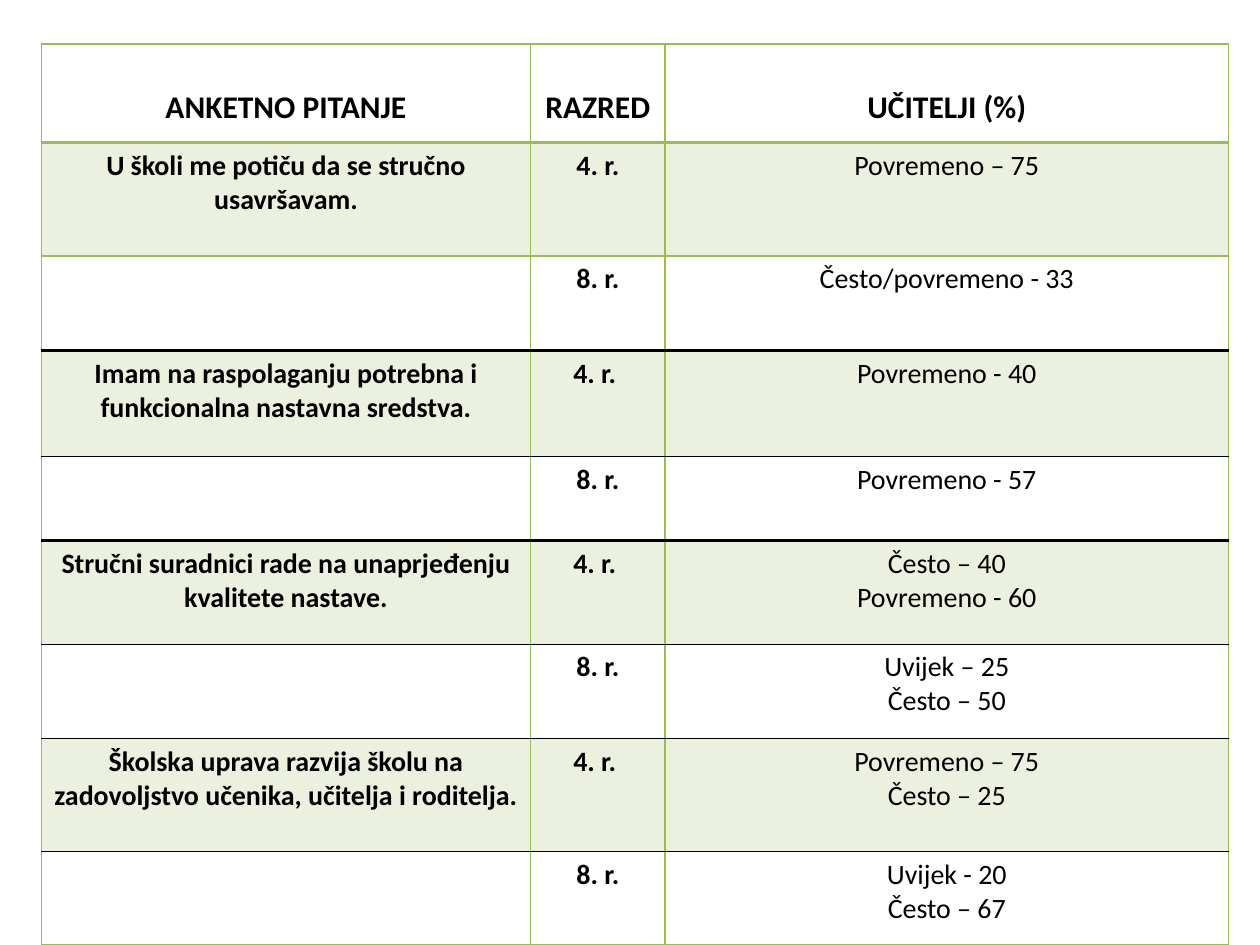
import pptx
import pptx.dml.color
import pptx.enum.text
import pptx.oxml
import pptx.oxml.ns
import pptx.util
from lxml import etree

GREEN = pptx.dml.color.RGBColor(0x9B, 0xBB, 0x59)
PALE_GREEN = pptx.dml.color.RGBColor(0xEB, 0xF1, 0xDE)
BLACK = pptx.dml.color.RGBColor(0, 0, 0)

SLIDE_WIDTH, SLIDE_HEIGHT = 10, 7.5
COLUMN_WIDTHS = [3.88, 1.07, 4.47]
ROW_HEIGHTS = [0.78, 0.9, 0.75, 0.84, 0.67, 0.82, 0.75, 0.9, 0.74]

# Horizontal rules from the top edge of the table to the bottom edge
SIDE_RULE = (GREEN, 1)
THIN_RULE = (BLACK, 0.25)
GROUP_RULE = (BLACK, 2.25)
ROW_RULES = [SIDE_RULE, (GREEN, 2), SIDE_RULE, GROUP_RULE, THIN_RULE,
             GROUP_RULE, THIN_RULE, THIN_RULE, THIN_RULE, SIDE_RULE]

SURVEY = [
    ("ANKETNO PITANJE", "RAZRED", "UČITELJI (%)"),
    ("U školi me potiču da se stručno usavršavam.", "4. r.", "Povremeno – 75"),
    ("", "8. r.", "Često/povremeno - 33"),
    ("Imam na raspolaganju potrebna i funkcionalna nastavna sredstva.",
     "4. r. ", "Povremeno - 40"),
    ("", "8. r.", "Povremeno - 57"),
    ("Stručni suradnici rade na unaprjeđenju kvalitete nastave.",
     "4. r. ", "Često – 40\nPovremeno - 60"),
    ("", "8. r.", "Uvijek – 25\nČesto – 50"),
    ("Školska uprava razvija školu na zadovoljstvo učenika, učitelja i roditelja.",
     "4. r. ", "Povremeno – 75\nČesto – 25"),
    ("", "8. r.", "Uvijek - 20\nČesto – 67"),
]


def set_borders(cell, top, bottom):
    """Draw the green sides and the given (colour, points) rules of a cell."""
    properties = cell._tc.get_or_add_tcPr()
    rules = {"lnL": SIDE_RULE, "lnR": SIDE_RULE, "lnT": top, "lnB": bottom}
    for tag, (colour, points) in rules.items():
        line = etree.SubElement(properties, pptx.oxml.ns.qn("a:" + tag),
                                w=str(pptx.util.Pt(points)))
        fill = etree.SubElement(line, pptx.oxml.ns.qn("a:solidFill"))
        etree.SubElement(fill, pptx.oxml.ns.qn("a:srgbClr"), val=str(colour))


def write_cell(cell, wording, size, bold):
    cell.text_frame.text = wording
    for paragraph in cell.text_frame.paragraphs:
        paragraph.alignment = pptx.enum.text.PP_ALIGN.CENTER
        paragraph.font.size = pptx.util.Pt(size)
        for run in paragraph.runs:
            run.font.name = "Calibri"
            run.font.size = pptx.util.Pt(size)
            run.font.bold = bold
            run.font.color.rgb = BLACK


def add_survey_table(slide, left, top):
    frame = slide.shapes.add_table(
        len(SURVEY), len(COLUMN_WIDTHS),
        pptx.util.Inches(left), pptx.util.Inches(top),
        pptx.util.Inches(sum(COLUMN_WIDTHS)), pptx.util.Inches(sum(ROW_HEIGHTS)))
    survey = frame.table
    survey.first_row = False
    survey.horz_banding = False
    for column, width in zip(survey.columns, COLUMN_WIDTHS):
        column.width = pptx.util.Inches(width)
    for row, height in zip(survey.rows, ROW_HEIGHTS):
        row.height = pptx.util.Inches(height)

    for r, entries in enumerate(SURVEY):
        is_header = r == 0
        for c, wording in enumerate(entries):
            cell = survey.cell(r, c)
            write_cell(cell, wording, 18 if is_header else 16, is_header or c < 2)
            set_borders(cell, ROW_RULES[r], ROW_RULES[r + 1])
            if r % 2:
                cell.fill.solid()
                cell.fill.fore_color.rgb = PALE_GREEN
            else:
                cell.fill.background()
            if is_header:
                cell.margin_top = pptx.util.Inches(0.35)


def main():
    presentation = pptx.Presentation()
    presentation.slide_width = pptx.util.Inches(SLIDE_WIDTH)
    presentation.slide_height = pptx.util.Inches(SLIDE_HEIGHT)
    slide = presentation.slides.add_slide(presentation.slide_layouts[6])
    add_survey_table(slide, left=0.33, top=0.35)
    presentation.save("out.pptx")


if __name__ == "__main__":
    main()
